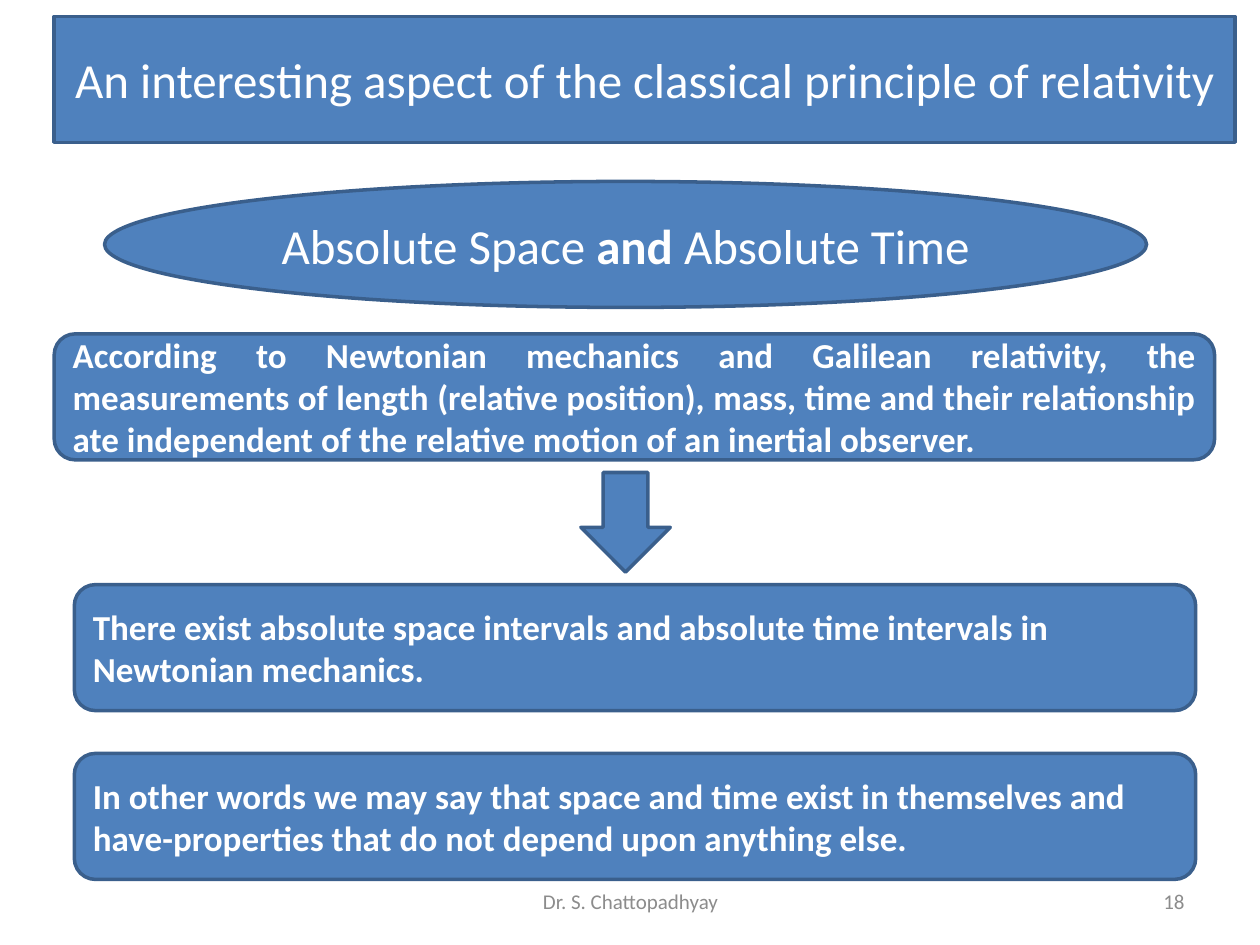
import pptx
import pptx.dml.color
import pptx.enum.shapes
import pptx.enum.text
import pptx.oxml
import pptx.oxml.ns
import pptx.util

SHAPE = pptx.enum.shapes.MSO_SHAPE
ALIGN = pptx.enum.text.PP_ALIGN
ANCHOR = pptx.enum.text.MSO_ANCHOR
Inches = pptx.util.Inches

COLORS = {"fill": "4F81BD", "line": "3A5F8C", "text": "FFFFFF", "footer": "8C8C8C"}
FONT = "Calibri"
BOX_H = 1

STATEMENTS = [
    (0.43, 2.65, 9.21, ALIGN.JUSTIFY,
     "According to Newtonian mechanics and Galilean relativity, the measurements of "
     "length (relative position), mass, time and their relationship ate independent "
     "of the relative motion of an inertial observer."),
    (0.59, 4.64, 8.9, ALIGN.LEFT,
     "There exist absolute space intervals and absolute time intervals in "
     "Newtonian mechanics."),
    (0.59, 5.98, 8.9, ALIGN.LEFT,
     "In other words we may say that space and time exist in themselves and "
     "have-properties that do not depend upon anything else."),
]


def rgb(name):
    return pptx.dml.color.RGBColor.from_string(COLORS[name])


def paint(s):
    s.fill.solid()
    s.fill.fore_color.rgb = rgb("fill")
    s.line.color.rgb = rgb("line")
    s.line.width = pptx.util.Pt(2)


def write(s, runs, size, align, color="text", bold=False):
    """Fill a shape with one paragraph; runs are (text, bold) pairs or a string."""
    tf = s.text_frame
    tf.word_wrap = True
    tf.auto_size = pptx.enum.text.MSO_AUTO_SIZE.NONE
    tf.vertical_anchor = ANCHOR.MIDDLE
    p = tf.paragraphs[0]
    p.alignment = align
    p.font.name = FONT
    p.font.size = pptx.util.Pt(size)
    p.font.color.rgb = rgb(color)
    p.font.bold = bold
    for text, strong in [(runs, bold)] if isinstance(runs, str) else runs:
        r = p.add_run()
        r.text = text
        if strong != bold:
            r.font.bold = strong


def add_block(slide, kind, left, top, width, height=BOX_H):
    s = slide.shapes.add_shape(kind, *map(Inches, (left, top, width, height)))
    s.shadow.inherit = False
    paint(s)
    return s


def add_title(slide, text):
    """Turn the title placeholder into a rounded box."""
    s = slide.shapes.title
    s.left, s.top, s.width, s.height = map(Inches, (0.43, 0.13, 9.37, BOX_H))
    s.element.spPr.append(pptx.oxml.parse_xml(
        f'<a:prstGeom {pptx.oxml.ns.nsdecls("a")} prst="roundRect"><a:avLst/></a:prstGeom>'))
    paint(s)
    write(s, text, 28, ALIGN.CENTER)
    s.text_frame.margin_left = s.text_frame.margin_right = Inches(0.05)


def add_footer(slide, text, left, width, align):
    s = slide.shapes.add_textbox(*map(Inches, (left, 6.95, width, 0.4)))
    write(s, text, 12, align, "footer")


def main():
    prs = pptx.Presentation()
    prs.slide_width, prs.slide_height = Inches(10), Inches(7.5)
    slide = prs.slides.add_slide(prs.slide_layouts.get_by_name("Title Only"))

    add_title(slide, "An interesting aspect of the classical principle of relativity")
    oval = add_block(slide, SHAPE.OVAL, 0.83, 1.44, 8.27)
    write(oval, [("Absolute Space ", False), ("and ", True), ("Absolute Time", False)],
          28, ALIGN.CENTER)
    for left, top, width, align, text in STATEMENTS:
        box = add_block(slide, SHAPE.ROUNDED_RECTANGLE, left, top, width)
        write(box, text, 20, align, bold=True)
    add_block(slide, SHAPE.DOWN_ARROW, 4.61, 3.75, 0.71, 0.79)

    add_footer(slide, "Dr. S. Chattopadhyay", 3.42, 3.17, ALIGN.CENTER)
    add_footer(slide, "18", 7.17, 2.33, ALIGN.RIGHT)
    prs.save("out.pptx")


if __name__ == "__main__":
    main()
